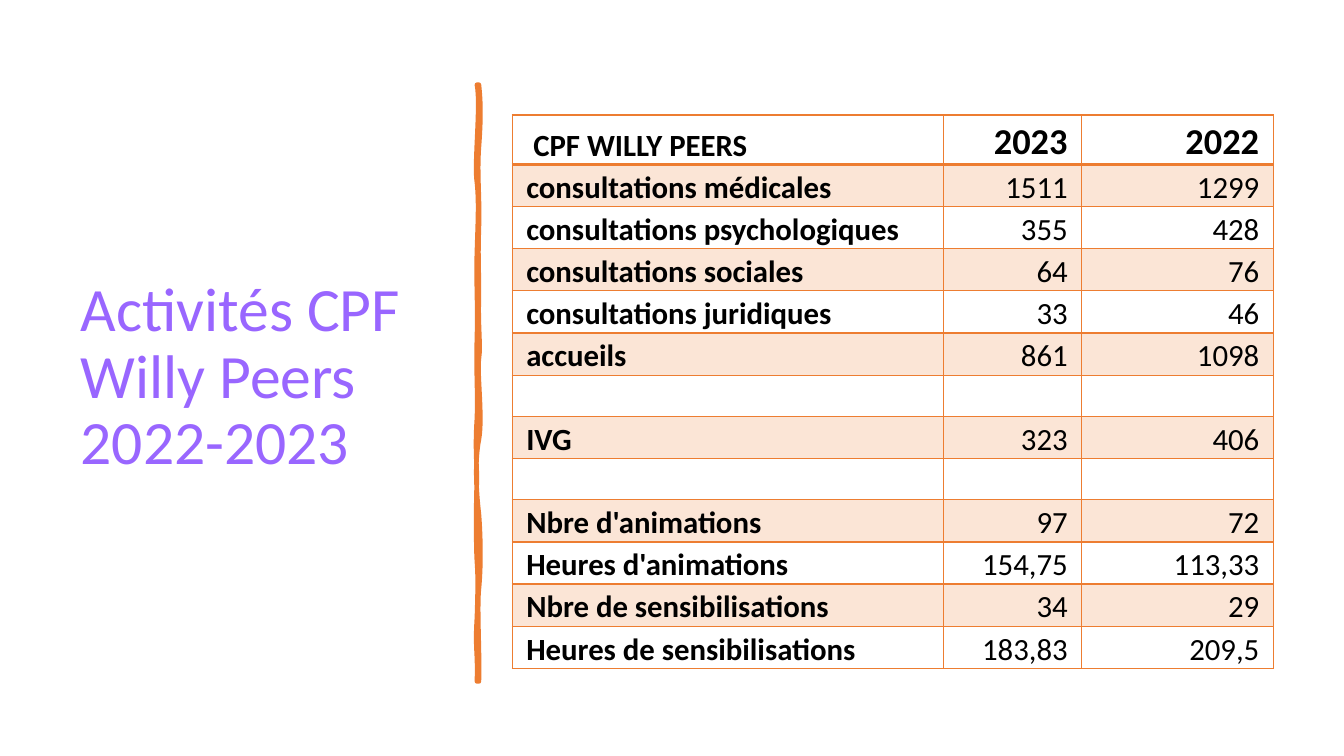
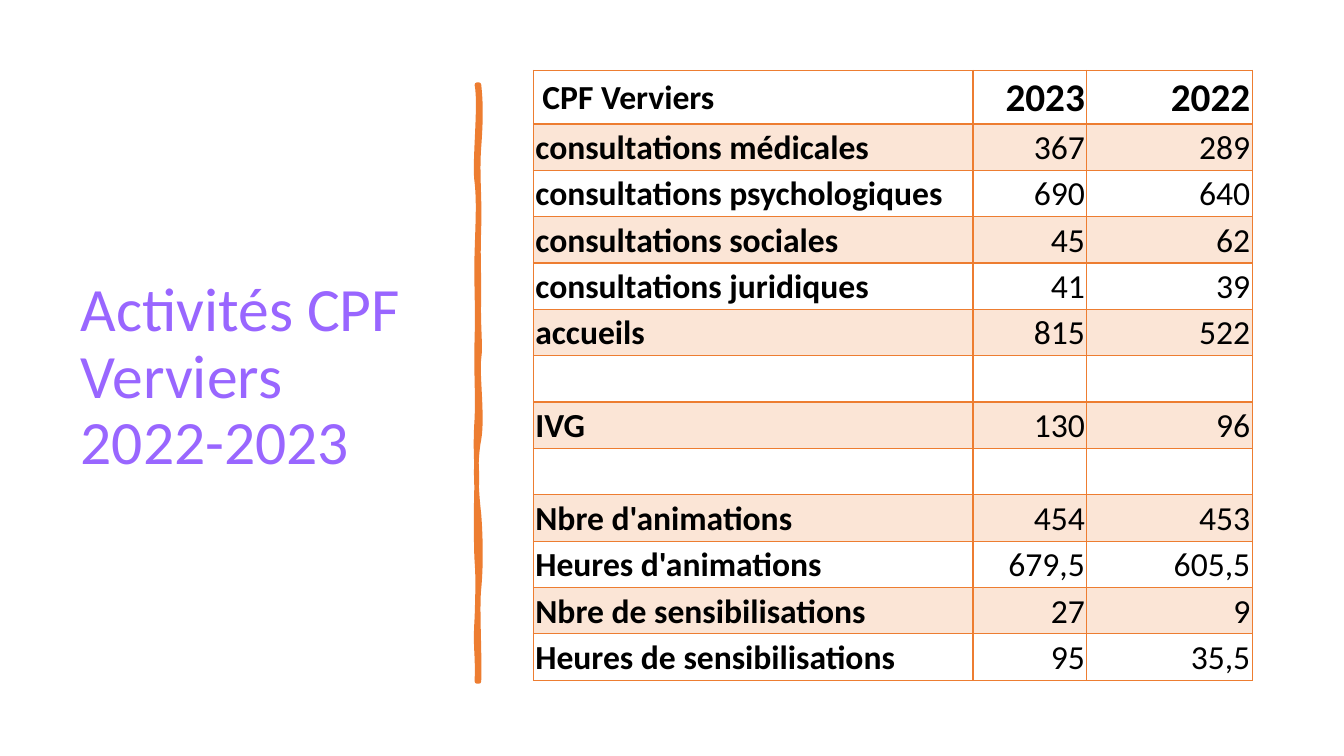
from dataclasses import dataclass

from lxml import etree
from pptx import Presentation
from pptx.dml.color import RGBColor
from pptx.enum.text import MSO_ANCHOR, PP_ALIGN
from pptx.oxml.ns import qn
from pptx.util import Inches, Pt

LEFT, RIGHT = PP_ALIGN.LEFT, PP_ALIGN.RIGHT
MIDDLE, BOTTOM = MSO_ANCHOR.MIDDLE, MSO_ANCHOR.BOTTOM


@dataclass(frozen=True)
class Theme:
    font: str = "Calibri"
    title_color: str = "9966FF"
    text_color: str = "000000"
    accent: str = "ED7D31"
    band: str = "FBE5D6"
    title_size: float = 44
    rule_width: float = 3.25
    grid_width: float = 1


THEME = Theme()


def write(frame, lines, *, size, color=THEME.text_color, bold=False, align=LEFT, spacing=1.0):
    """Write the lines as one paragraph, with a line break between them."""
    paragraph = frame.paragraphs[0]
    paragraph.alignment = align
    paragraph.line_spacing = spacing
    for index, line in enumerate(lines):
        if index:
            paragraph.add_line_break()
        run = paragraph.add_run()
        run.text = line
        run.font.name = THEME.font
        run.font.size = Pt(size)
        run.font.bold = bold
        run.font.color.rgb = RGBColor.from_string(color)


def set_borders(cell, **widths):
    """Draw the four cell borders; they come before the fill in the cell properties."""
    properties = cell._tc.get_or_add_tcPr()
    for index, side in enumerate("LRTB"):
        width = widths.get(side, THEME.grid_width)
        line = etree.Element(qn(f"a:ln{side}"), w=str(Pt(width)))
        fill = etree.SubElement(line, qn("a:solidFill"))
        etree.SubElement(fill, qn("a:srgbClr"), val=THEME.accent)
        properties.insert(index, line)


# Content: label, 2023, 2022 for each centre
LABELS = [
    "consultations médicales", "consultations psychologiques", "consultations sociales",
    "consultations juridiques", "accueils", "", "IVG", "", "Nbre d'animations",
    "Heures d'animations", "Nbre de sensibilisations", "Heures de sensibilisations",
]
CENTRES = [
    dict(
        title=["Activités CPF Willy Peers ", "2022-2023"], heading="CPF WILLY PEERS",
        values_2023=["1511", "355", "64", "33", "861", "", "323", "", "97", "154,75", "34", "183,83"],
        values_2022=["1299", "428", "76", "46", "1098", "", "406", "", "72", "113,33", "29", "209,5"],
        left=5.08, top=1.14, columns=[4.28, 1.37, 1.9], header_height=0.49, row_height=0.41,
        size=22, year_size=26, spacing=1.07, anchor=BOTTOM, inset=0.14, header_line=2,
    ),
    dict(
        title=["Activités CPF Verviers 2022-2023"], heading="CPF Verviers",
        values_2023=["367", "690", "45", "41", "815", "", "130", "", "454", "679,5", "27", "95"],
        values_2022=["289", "640", "62", "39", "522", "", "96", "", "453", "605,5", "9", "35,5"],
        left=5.29, top=0.7, columns=[4.36, 1.13, 1.64], header_height=0.53, row_height=0.46,
        size=24, year_size=28, spacing=1.0, anchor=MIDDLE, inset=0.02, header_line=1,
    ),
]

# Hand-drawn rule: start point, then cubic segments (two controls and an end)
RULE_START = (4.75, 0.84)
RULE_CURVES = [
    (4.77, 1.02, 4.77, 1.19, 4.75, 1.46), (4.73, 1.73, 4.76, 1.95, 4.75, 2.26),
    (4.74, 2.57, 4.75, 2.62, 4.75, 2.94), (4.74, 3.25, 4.77, 3.42, 4.75, 3.56),
    (4.73, 3.7, 4.79, 4.14, 4.75, 4.36), (4.71, 4.57, 4.72, 4.84, 4.75, 5.1),
    (4.77, 5.36, 4.77, 5.64, 4.75, 5.84), (4.73, 6.03, 4.76, 6.5, 4.75, 6.76),
    (4.74, 6.76, 4.73, 6.76, 4.73, 6.76), (4.74, 6.46, 4.71, 6.44, 4.73, 6.13),
    (4.74, 5.83, 4.74, 5.7, 4.73, 5.57), (4.72, 5.44, 4.72, 4.95, 4.73, 4.77),
    (4.73, 4.59, 4.71, 4.45, 4.73, 4.15), (4.74, 3.86, 4.72, 3.73, 4.73, 3.35),
    (4.74, 2.98, 4.72, 2.81, 4.73, 2.5), (4.74, 2.18, 4.75, 2, 4.73, 1.81),
    (4.7, 1.63, 4.77, 1.04, 4.73, 0.84), (4.74, 0.84, 4.74, 0.84, 4.75, 0.84),
]

deck = Presentation()
deck.slide_width, deck.slide_height = Inches(13.33), Inches(7.5)
title_only = deck.slide_layouts[5]

for centre in CENTRES:
    slide = deck.slides.add_slide(title_only)

    # Title
    title = slide.shapes.title
    title.left, title.top = Inches(0.7), Inches(0.7)
    title.width, title.height = Inches(3.74), Inches(6.11)
    title.text_frame.word_wrap = True
    title.text_frame.vertical_anchor = MIDDLE
    write(title.text_frame, centre["title"], size=THEME.title_size,
          color=THEME.title_color, spacing=0.9)

    # Vertical rule: straight segments first, then each one bent into its curve
    outline = slide.shapes.build_freeform(Inches(RULE_START[0]), Inches(RULE_START[1]))
    outline.add_line_segments([(Inches(x), Inches(y)) for *_, x, y in RULE_CURVES], close=True)
    rule = outline.convert_to_shape()
    for segment, curve in zip(list(rule._element.iter(qn("a:lnTo"))), RULE_CURVES):
        bend = etree.Element(qn("a:cubicBezTo"))
        for x, y in zip(curve[::2], curve[1::2]):
            etree.SubElement(bend, qn("a:pt"), x=str(Inches(x) - rule.left),
                             y=str(Inches(y) - rule.top))
        segment.getparent().replace(segment, bend)
    rule.shadow.inherit = False
    rule.fill.solid()
    rule.fill.fore_color.rgb = RGBColor.from_string(THEME.accent)
    rule.line.color.rgb = RGBColor.from_string(THEME.accent)
    rule.line.width = Pt(THEME.rule_width)

    # Activity table
    rows = [(centre["heading"], "2023", "2022"),
            *zip(LABELS, centre["values_2023"], centre["values_2022"])]
    heights = [centre["header_height"]] + [centre["row_height"]] * len(LABELS)
    activity = slide.shapes.add_table(
        len(rows), len(centre["columns"]), Inches(centre["left"]), Inches(centre["top"]),
        Inches(sum(centre["columns"])), Inches(sum(heights))).table
    activity.first_row = activity.horz_banding = False
    for column, width in zip(activity.columns, centre["columns"]):
        column.width = Inches(width)

    for r, (row, height) in enumerate(zip(rows, heights)):
        activity.rows[r].height = Inches(height)
        for c, text in enumerate(row):
            cell = activity.cell(r, c)
            is_label, is_header = c == 0, r == 0
            heading_indent = 0.07 if is_label and is_header else 0
            cell.margin_left = Inches(centre["inset"] + heading_indent)
            cell.margin_right = Inches(centre["inset"])
            cell.margin_top, cell.margin_bottom = Inches(0.02), 0
            cell.vertical_anchor = centre["anchor"]
            if r % 2:
                cell.fill.solid()
                cell.fill.fore_color.rgb = RGBColor.from_string(THEME.band)
            else:
                cell.fill.background()
            header_edge = {0: "B", 1: "T"}.get(r)
            set_borders(cell, **({header_edge: centre["header_line"]} if header_edge else {}))
            if text:
                write(cell.text_frame, [text], bold=is_label or is_header,
                      size=centre["year_size"] if is_header and not is_label else centre["size"],
                      align=LEFT if is_label else RIGHT, spacing=centre["spacing"])

deck.save("out.pptx")
